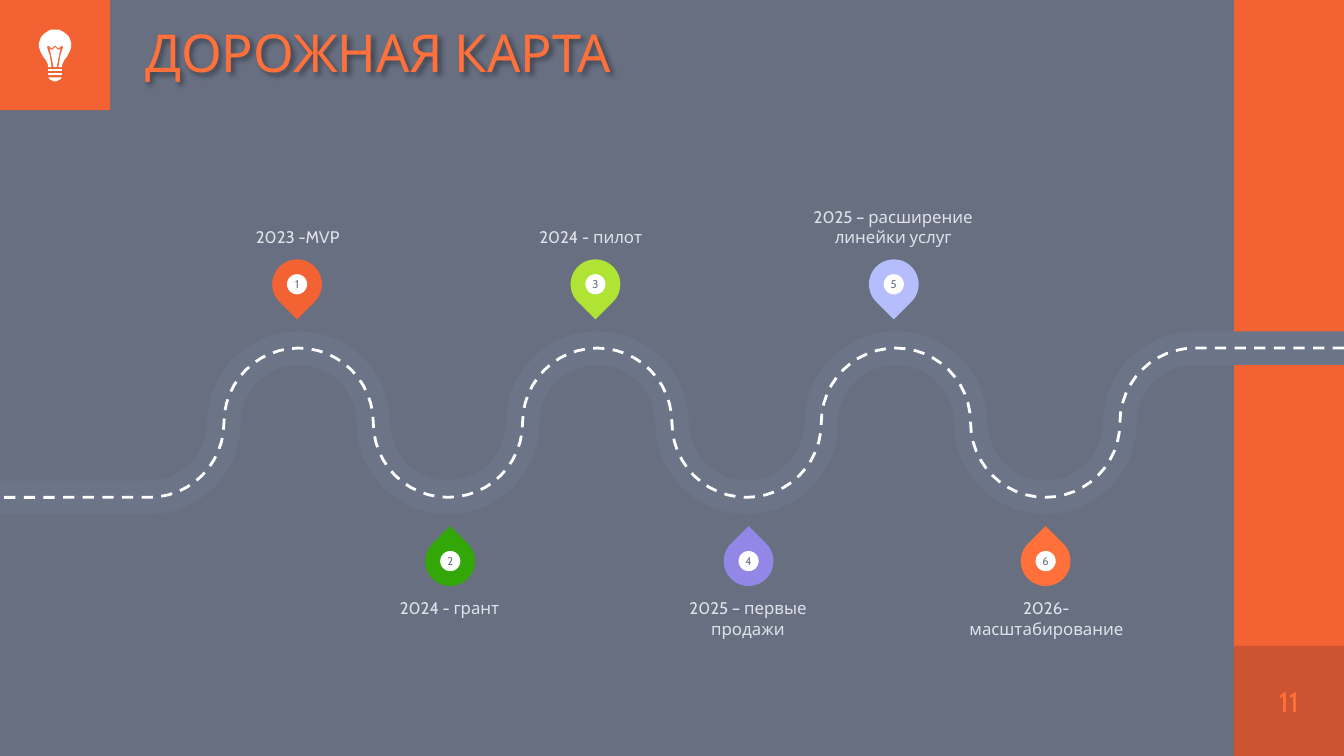
from dataclasses import dataclass
from math import cos, pi, sin

from lxml import etree
from pptx import Presentation
from pptx import util as u
from pptx.dml import color
from pptx.enum import dml, shapes, text
from pptx.oxml import ns

Inches = u.Inches


@dataclass(frozen=True)
class Theme:
    font: str = "Cabin"
    navy: str = "02102E"
    orange: str = "F36232"
    bright: str = "FF703B"
    road: str = "6C7588"
    pale: str = "DFE2E9"
    white: str = "FFFFFF"
    title: float = 28
    page: float = 15
    label: float = 9
    digit: float = 6


T = Theme()
WIDE, BAR = 10, 0.82
HIGH = WIDE * 9 / 16
KIND, ALIGN, ANCHOR = shapes.MSO_SHAPE, text.PP_ALIGN, text.MSO_ANCHOR

# Number, label, pin colour, pin centre, label left; odd stops sit above the road
STOPS = [
    (1, "2023 -MVP", T.orange, 2.21, 1.51),
    (2, "2024 - грант", "32A707", 3.35, 2.64),
    (3, "2024 - пилот", "AFE435", 4.43, 3.69),
    (4, "2025 – первые продажи", "9287E6", 5.57, 4.86),
    (5, "2025 – расширение линейки услуг", "B5BDFD", 6.65, 5.94),
    (6, "2026- масштабирование", T.bright, 7.78, 7.08),
]

# Bulb parts: left half outlines in hundredths of an inch from the axis
BULB = [
    [(0, 22), (3, 22), (5, 23), (8, 25), (10, 27), (11, 29), (12, 32),
     (12, 35), (11, 38), (9, 42), (7, 44.5), (5.5, 47.5), (5, 50), (2.5, 50),
     (4, 41), (6, 35), (5.4, 34), (4.6, 34.4), (2.5, 36), (0.3, 34)],
    [(0, 35), (2, 37), (3, 37), (4, 36), (1.2, 50)],
    [(5, 51), (5, 53)],
    [(5, 54), (5, 56)],
    [(5, 57.5), (4, 59), (1, 60.5)],
]


def rgb(code):
    return color.RGBColor.from_string(code)


def apply(item, form):
    for name, value in form.items():
        setattr(item, name, value)


def paint(shape, fill, alpha=None):
    shape.shadow.inherit = False
    shape.line.fill.background()
    shape.fill.solid()
    shape.fill.fore_color.rgb = rgb(fill)
    if alpha:
        node = shape.fill._xPr.find(".//" + ns.qn("a:srgbClr"))
        etree.SubElement(node, ns.qn("a:alpha"), val=str(alpha * 1000))


def block(slide, box, fill, kind=KIND.RECTANGLE, alpha=None):
    shape = slide.shapes.add_shape(kind, *map(Inches, box))
    paint(shape, fill, alpha)
    return shape


def write(shape, words, size, tint, align=ALIGN.CENTER, anchor=ANCHOR.MIDDLE):
    frame = shape.text_frame
    apply(frame, dict(margin_left=0, margin_right=0, margin_top=0,
                      margin_bottom=0, word_wrap=True, vertical_anchor=anchor))
    line = frame.paragraphs[0]
    line.alignment = align
    run = line.add_run()
    run.text = words
    apply(run.font, dict(name=T.font, size=u.Pt(size)))
    run.font.color.rgb = rgb(tint)
    return shape


def note(slide, box, *args, **form):
    return write(slide.shapes.add_textbox(*map(Inches, box)), *args, **form)


def trace(slide, points, close):
    spots = [(Inches(x), Inches(y)) for x, y in points]
    pen = slide.shapes.build_freeform(*spots[0])
    pen.add_line_segments(spots[1:], close=close)
    shape = pen.convert_to_shape()
    shape.shadow.inherit = False
    return shape


def frame(slide, box):
    """Backdrop, side bar and page number."""
    x, y, w, h = box
    block(slide, box, T.navy, alpha=60)
    block(slide, (x + w - BAR, y, BAR, h), T.orange)
    foot = (x + w - BAR, y + h - BAR, BAR, BAR)
    block(slide, foot, T.navy, alpha=16)
    note(slide, foot, "11", T.page, T.bright)


def header(slide, box):
    """Title with a soft shadow."""
    shape = note(slide, box, "ДОРОЖНАЯ КАРТА", T.title, T.bright, align=ALIGN.LEFT)
    shape.text_frame.paragraphs[0].line_spacing = 0.9
    shape.shadow.inherit = False
    effect = shape._element.spPr.find(ns.qn("a:effectLst"))
    cast = etree.SubElement(effect, ns.qn("a:outerShdw"), blurRad="38100",
                            dist="25400", dir="2700000", algn="tl")
    tint = etree.SubElement(cast, ns.qn("a:srgbClr"), val="000000")
    etree.SubElement(tint, ns.qn("a:alpha"), val="40000")


def bulb(slide, box):
    """Light bulb on an orange square."""
    x, y, w, _ = box
    block(slide, box, T.orange)
    mid = x + w / 2
    for half in BULB:
        left = [(mid - dx / 100, y + dy / 100) for dx, dy in half]
        right = [(mid + dx / 100, y + dy / 100) for dx, dy in reversed(half)]
        paint(trace(slide, left + right, True), T.white)


def road(slide, box):
    """Winding road of half circles, drawn from right to left."""
    x, y, w, h = box
    r, turns, steps = h / 2, 8, 24
    points = [(x + w, y)]
    for i in range(turns):
        side = 1 if i % 2 else -1
        first = steps // 2 if i == 0 else 0
        last = steps // 2 if i == turns - 1 else steps
        for k in range(first, last + 1):
            a = pi * k / steps
            points.append((x + w - h * (i + 1) + r * cos(a),
                           y + r + side * r * sin(a)))
    points.append((x, y + h))
    for tint, width, dash in ((T.road, 18, None),
                              (T.white, 1.5, dml.MSO_LINE.DASH)):
        shape = trace(slide, points, False)
        shape.fill.background()
        shape.line.color.rgb = rgb(tint)
        apply(shape.line, dict(width=u.Pt(width), dash_style=dash))


def stop(slide, box, num, words, tint, mid):
    """Numbered pin at the middle of its stop, and the label."""
    above = num % 2
    x, y, w, h = box
    size, dot, tall = 0.37, 0.15, 0.58
    top = y + h - size if above else y
    pin = block(slide, (mid - size / 2, top, size, size), tint, KIND.TEAR)
    pin.adjustments[0] = 1
    pin.rotation = 135 if above else 315
    gap = (size - dot) / 2
    disc = block(slide, (mid - dot / 2, top + gap, dot, dot), T.white, KIND.OVAL)
    write(disc, str(num), T.digit, T.road)
    note(slide, (x, y if above else y + h - tall, w, tall), words, T.label,
         T.pale, anchor=ANCHOR.BOTTOM if above else ANCHOR.TOP)


def main():
    deck = Presentation()
    apply(deck, dict(slide_width=Inches(WIDE), slide_height=Inches(HIGH)))
    slide = deck.slides.add_slide(deck.slide_layouts[6])
    frame(slide, (0, 0, WIDE, HIGH))
    bulb(slide, (0, 0, BAR, BAR))
    header(slide, (1.08, 0, 8.1, BAR))
    road(slide, (0, 2.59, WIDE, 10 / 9))
    for num, words, tint, mid, left in STOPS:
        top = 1.26 if num % 2 else 3.99
        stop(slide, (left, top, 1.41, 1.04), num, words, tint, mid)
    deck.save("out.pptx")


if __name__ == "__main__":
    main()
